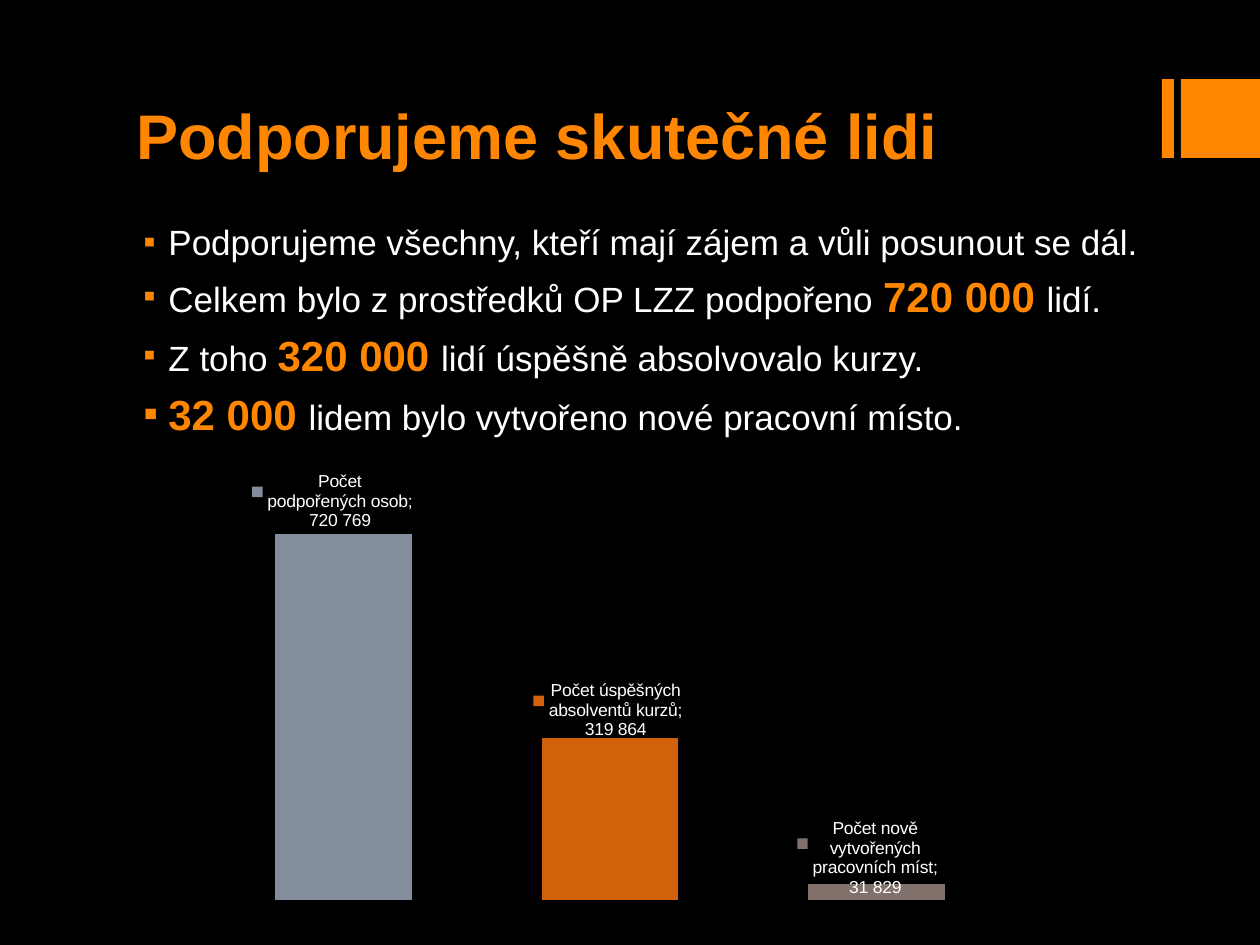
from lxml import etree
from pptx import Presentation
from pptx.chart.data import CategoryChartData
from pptx.dml.color import RGBColor
from pptx.enum import chart as ch, shapes, text
from pptx.oxml import parse_xml
from pptx.oxml.ns import nsdecls, qn
from pptx.util import Pt

PX = 914400 / 126
COLORS = {
    "bg": "000000", "accent": "FF8600", "text": "FFFFFF",
    "supported": "838D9B", "graduates": "D2610C", "jobs": "80716A",
}
PLAIN = {"name": "Arial", "size": Pt(20), "bold": False}
STRONG = {"name": "Arial", "size": Pt(24), "bold": True}
TITLE = {"name": "Arial", "size": Pt(36), "bold": True}
LABEL = {"name": "Arial", "size": Pt(10), "bold": False}

BULLETS = [
    [("Podporujeme všechny, kteří mají zájem a vůli posunout se dál.", False)],
    [("Celkem bylo z prostředků OP LZZ podpořeno ", False),
     ("720 000 ", True), ("lidí.", False)],
    [("Z toho ", False), ("320 000 ", True),
     ("lidí úspěšně absolvovalo kurzy.", False)],
    [("32 000 ", True), ("lidem bylo vytvořeno nové pracovní místo.", False)],
]
BARS = [
    ("Počet podpořených osob", 720769, "supported", (-11, -217)),
    ("Počet úspěšných absolventů kurzů", 319864, "graduates", (-2, -109)),
    ("Počet nově vytvořených pracovních míst", 31829, "jobs", (-9, -34)),
]


def px(*values):
    return [round(v * PX) for v in values]


def rgb(name):
    return RGBColor.from_string(COLORS[name])


def set_attrs(obj, fmt):
    for key, value in fmt.items():
        setattr(obj, key, value)


def set_font(font, fmt, color):
    set_attrs(font, fmt)
    font.color.rgb = rgb(color)


def add_text_frame(slide, box):
    tf = slide.shapes.add_textbox(*px(*box)).text_frame
    set_attrs(tf, {"word_wrap": True, "auto_size": text.MSO_AUTO_SIZE.NONE,
                   "vertical_anchor": text.MSO_ANCHOR.TOP})
    return tf


def add_run(p, words, fmt, color):
    r = p.add_run()
    r.text = words
    set_font(r.font, fmt, color)


def add_corner(slide, box):
    x, y, w, h = box
    for left, width in ((0, 12), (w - h, h)):
        sp = slide.shapes.add_shape(
            shapes.MSO_SHAPE.RECTANGLE, *px(x + left, y, width, h))
        sp.shadow.inherit = False
        sp.fill.solid()
        sp.fill.fore_color.rgb = rgb("accent")
        sp.line.fill.background()


def add_title(slide, box):
    p = add_text_frame(slide, box).paragraphs[0]
    add_run(p, "Podporujeme skutečné lidi", TITLE, "accent")


def set_bullet(p):
    pPr = p._p.get_or_add_pPr()
    indent, hang = px(32, -25)
    pPr.set("marL", str(indent))
    pPr.set("indent", str(hang))
    color = etree.SubElement(pPr, qn("a:buClr"))
    etree.SubElement(color, qn("a:srgbClr"), val=COLORS["accent"])
    etree.SubElement(pPr, qn("a:buFont"), typeface="Arial")
    etree.SubElement(pPr, qn("a:buChar"), char="▪")


def add_bullets(slide, box):
    tf = add_text_frame(slide, box)
    for i, runs in enumerate(BULLETS):
        p = tf.paragraphs[0] if i == 0 else tf.add_paragraph()
        p.space_before = Pt(4.8)
        set_bullet(p)
        for words, strong in runs:
            add_run(p, words, STRONG if strong else PLAIN,
                    "accent" if strong else "text")


def layout_xml(inner):
    return parse_xml(f'<c:layout {nsdecls("c")}><c:manualLayout>{inner}'
                     '</c:manualLayout></c:layout>')


def set_plot_layout(chart, x, y, w, h):
    inner = ('<c:layoutTarget val="inner"/><c:xMode val="edge"/>'
             '<c:yMode val="edge"/>')
    for key, value in zip("xywh", (x, y, w, h)):
        inner += f'<c:{key} val="{value:.4f}"/>'
    area = chart._chartSpace.chart.plotArea
    for old in area.findall(qn("c:layout")):
        area.remove(old)
    area.insert(0, layout_xml(inner))


def set_series_labels(series):
    labels = series.data_labels
    set_attrs(labels, {
        "show_value": True, "show_percentage": True,
        "show_category_name": True, "show_series_name": True,
        "number_format": "#,##0", "number_format_is_linked": False})
    set_font(labels.font, LABEL, "text")
    for lines in labels._element.findall(qn("c:showLeaderLines")):
        lines.set("val", "0")


def add_label(point, words, dx, dy):
    label = point.data_label
    p = label.text_frame.paragraphs[0]
    add_run(p, words, LABEL, "text")
    dLbl = label._dLbl
    dLbl.find(qn("c:showLegendKey")).set("val", "1")
    dLbl.find(qn("c:idx")).addnext(
        layout_xml(f'<c:x val="{dx:.4f}"/><c:y val="{dy:.4f}"/>'))


def add_people_chart(slide, box):
    x, y, w, h = box
    data = CategoryChartData(number_format="#,##0")
    data.categories = [bar[0] for bar in BARS]
    data.add_series("", [bar[1] for bar in BARS])
    chart = slide.shapes.add_chart(
        ch.XL_CHART_TYPE.COLUMN_STACKED, *px(x, y, w, h), data).chart
    chart.has_legend = chart.has_title = False
    set_font(chart.font, LABEL, "text")
    value_axis = chart.value_axis
    set_attrs(value_axis, {"minimum_scale": 0, "maximum_scale": 800000,
                           "has_major_gridlines": False})
    chart.category_axis.visible = value_axis.visible = False
    plot = chart.plots[0]
    set_attrs(plot, {"gap_width": 95, "overlap": 100,
                     "vary_by_categories": True})
    series = plot.series[0]
    set_series_labels(series)
    for i, (name, value, color, (dx, dy)) in enumerate(BARS):
        point = series.points[i]
        point.format.fill.solid()
        point.format.fill.fore_color.rgb = rgb(color)
        number = f"{value:,}".replace(",", " ")
        add_label(point, f"{name}; {number}", dx / w, dy / h)
    set_plot_layout(chart, 16 / w, 20 / h, 800 / w, 408 / h)


def main():
    prs = Presentation()
    prs.slide_width, prs.slide_height = px(1260, 945)
    slide = prs.slides.add_slide(prs.slide_layouts[6])
    slide.background.fill.solid()
    slide.background.fill.fore_color.rgb = rgb("bg")
    add_corner(slide, (1162, 79, 98, 79))
    add_title(slide, (124, 90, 1008, 159))
    add_bullets(slide, (124, 214, 1050, 229))
    add_people_chart(slide, (194, 472, 833, 436))
    prs.save("out.pptx")


if __name__ == "__main__":
    main()
